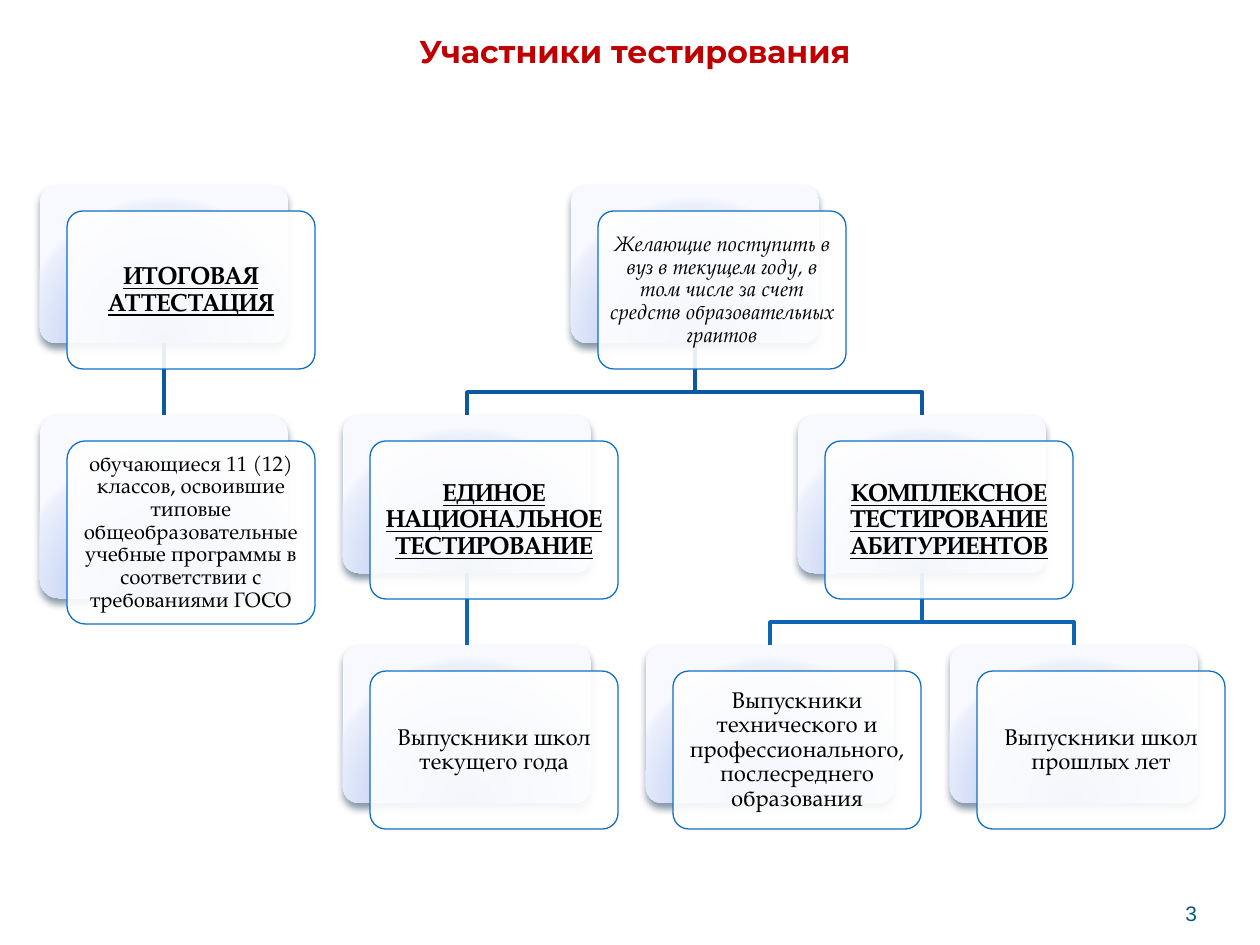
from lxml import etree
from pptx import Presentation
from pptx.dml.color import RGBColor
from pptx.enum.shapes import MSO_CONNECTOR as Connector, MSO_SHAPE as Shape
from pptx.enum.text import MSO_ANCHOR as Anchor, MSO_AUTO_SIZE as AutoSize, PP_ALIGN as Align
from pptx.oxml import parse_xml
from pptx.oxml.ns import qn
from pptx.util import Emu, Pt

SCALE = 914400 / 126
NS = 'xmlns:a="http://schemas.openxmlformats.org/drawingml/2006/main"'
CARD_W, CARD_H, TALL_H = 248, 158, 183
SHIFT_X, SHIFT_Y = 27, 26
CARD_INSET = 6
ROWS = (185, 415, 645)
BEND = 49
SERIF = "TeX Gyre Pagella"
UPPER_LINK, LOWER_LINK = "0C599F", "0E65B4"
STOPS = ((0, "8DA8E3"), (43, "BBCBF3"), (93, "EAEFFB"), (100, "F7F9FF"))

HEADING = dict(size=14, bold=True, underline=True)
CARDS = {
    "final": (40, 0, CARD_H, "ИТОГОВАЯ АТТЕСТАЦИЯ", HEADING),
    "pupils": (40, 1, TALL_H,
               "обучающиеся 11 (12) классов, освоившие типовые общеобразовательные "
               "учебные программы в соответствии с требованиями ГОСО", dict(size=12)),
    "applicants": (571, 0, CARD_H,
                   "Желающие поступить в вуз в текущем году, в том числе за счет "
                   "средств образовательных грантов", dict(size=12, italic=True)),
    "national": (343, 1, CARD_H, "ЕДИНОЕ НАЦИОНАЛЬНОЕ ТЕСТИРОВАНИЕ", HEADING),
    "this_year": (343, 2, CARD_H, "Выпускники школ текущего года", dict(size=13)),
    "complex": (798, 1, CARD_H, "КОМПЛЕКСНОЕ ТЕСТИРОВАНИЕ АБИТУРИЕНТОВ", HEADING),
    "colleges": (646, 2, CARD_H,
                 "Выпускники технического и профессионального, послесреднего образования",
                 dict(size=13)),
    "past_years": (950, 2, CARD_H, "Выпускники школ прошлых лет", dict(size=13)),
}
STRAIGHT_LINKS = (
    ("final", "pupils", UPPER_LINK),
    ("national", "this_year", LOWER_LINK),
)
BENT_LINKS = (
    ("complex", "past_years", LOWER_LINK),
    ("complex", "colleges", LOWER_LINK),
    ("applicants", "complex", UPPER_LINK),
    ("applicants", "national", UPPER_LINK),
)


def px(length):
    return Emu(round(length * SCALE))


def box(*lengths):
    return [px(length) for length in lengths]


def color(value):
    return RGBColor.from_string(value)


def write(frame, text, size, font=SERIF, hue="000000", align=Align.CENTER,
          bold=False, italic=False, underline=False):
    frame.word_wrap = True
    frame.text = text
    paragraph = frame.paragraphs[0]
    paragraph.alignment = align
    face = paragraph.runs[0].font
    face.name, face.size = font, Pt(size)
    face.bold, face.italic, face.underline = bold, italic, underline
    face.color.rgb = color(hue)


def set_insets(frame, inset):
    frame.margin_left = frame.margin_top = inset
    frame.margin_right = frame.margin_bottom = inset


def add_rounded(slide, left, top, height):
    card = slide.shapes.add_shape(Shape.ROUNDED_RECTANGLE, *box(left, top, CARD_W, height))
    card.adjustments[0] = 0.1
    card.shadow.inherit = False
    return card


def add_backing(slide, left, row, height):
    backing = add_rounded(slide, left, ROWS[row], height)
    backing.line.fill.background()
    stops = "".join(f'<a:gs pos="{position * 1000}"><a:srgbClr val="{hue}"/></a:gs>'
                    for position, hue in STOPS)
    properties = backing._element.spPr
    properties.find(qn("a:prstGeom")).addnext(parse_xml(
        f'<a:gradFill {NS} rotWithShape="1"><a:gsLst>{stops}</a:gsLst><a:path path="circle">'
        '<a:fillToRect l="50000" t="130000" r="50000" b="-30000"/></a:path></a:gradFill>'))
    properties.find(qn("a:effectLst")).append(parse_xml(
        f'<a:outerShdw {NS} blurRad="{Pt(4.5)}" dist="{Pt(3)}" dir="5400000" rotWithShape="0">'
        '<a:srgbClr val="042747"><a:alpha val="48000"/></a:srgbClr></a:outerShdw>'))
    return backing


def add_front(slide, left, row, height, text, style):
    front = add_rounded(slide, left + SHIFT_X, ROWS[row] + SHIFT_Y, height)
    front.fill.solid()
    front.fill.fore_color.rgb = color("FFFFFF")
    white = front._element.spPr.find(qn("a:solidFill"))[0]
    etree.SubElement(white, qn("a:alpha"), val="90000")
    front.line.color.rgb = color("0F6FC6")
    front.line.width = Pt(0.75)
    frame = front.text_frame
    set_insets(frame, px(CARD_INSET))
    frame.vertical_anchor = Anchor.MIDDLE
    write(frame, text, **style)
    frame.paragraphs[0].line_spacing = 0.9


def style_link(link, hue):
    link.line.color.rgb = color(hue)
    link.line.width = Pt(2)


def add_straight_link(slide, parent, child, hue):
    link = slide.shapes.add_connector(Connector.STRAIGHT, 0, 0, 0, 0)
    link.begin_connect(parent, 2)
    link.end_connect(child, 0)
    style_link(link, hue)
    etree.SubElement(link._element.spPr, qn("a:effectLst"))


def add_bent_link(slide, parent, child, hue):
    start_x, end_x = (card.left + card.width // 2 for card in (parent, child))
    start_y = parent.top + parent.height
    bend_y = start_y + px(BEND)
    outline = slide.shapes.build_freeform(start_x, start_y)
    outline.add_line_segments([(start_x, bend_y), (end_x, bend_y), (end_x, child.top)],
                              close=False)
    link = outline.convert_to_shape()
    link.shadow.inherit = False
    link.fill.background()
    style_link(link, hue)


def add_title(slide):
    title = slide.shapes.add_textbox(*box(64, 26, 1142, 50)).text_frame
    write(title, "Участники тестирования", 18, "Montserrat", "C00000", bold=True)
    title.auto_size = AutoSize.SHAPE_TO_FIT_TEXT


def add_page_number(slide):
    number = slide.shapes.add_textbox(*box(1092, 876, 105, 50)).text_frame
    set_insets(number, 0)
    number.vertical_anchor = Anchor.BOTTOM
    write(number, "3", 12, "Arial", "045C75", Align.RIGHT)


def main():
    deck = Presentation()
    deck.slide_width, deck.slide_height = box(1260, 945)
    slide = deck.slides.add_slide(deck.slide_layouts[6])
    add_title(slide)
    backings = {key: add_backing(slide, *card[:3]) for key, card in CARDS.items()}
    for parent, child, hue in BENT_LINKS:
        add_bent_link(slide, backings[parent], backings[child], hue)
    for parent, child, hue in STRAIGHT_LINKS:
        add_straight_link(slide, backings[parent], backings[child], hue)
    for card in CARDS.values():
        add_front(slide, *card)
    add_page_number(slide)
    deck.save("out.pptx")


if __name__ == "__main__":
    main()
